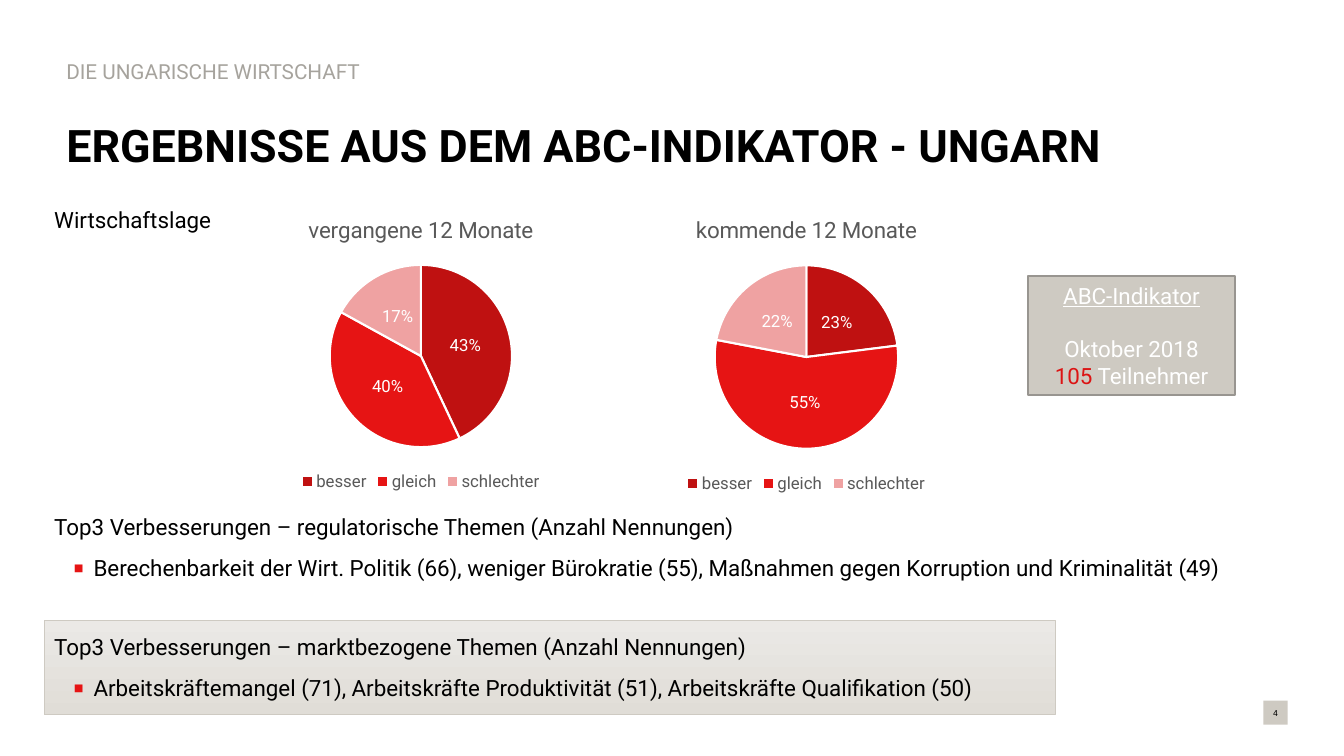
"""Build a slide on the Hungarian results of the ABC indicator survey."""
import pptx
import pptx.chart.data
import pptx.dml.color
import pptx.enum.chart
import pptx.enum.shapes
import pptx.enum.text
import pptx.oxml
import pptx.oxml.ns
import pptx.util

FONT = "Roboto"
BLACK, WHITE, SAND, GREY, RED = "000000", "FFFFFF", "CECAC2", "595959", "E61414"
ANSWERS = {"besser": "BF1111", "gleich": RED, "schlechter": "EFA2A2"}
PIE_TOP, PIE_SHARE = 0.218, 0.617
hue = pptx.dml.color.RGBColor.from_string
Pt = pptx.util.Pt
middle = pptx.enum.text.MSO_ANCHOR.MIDDLE
centred = pptx.enum.text.PP_ALIGN.CENTER
rectangle = pptx.enum.shapes.MSO_SHAPE.RECTANGLE

deck = pptx.Presentation()
deck.slide_width = pptx.util.Inches(13.33)
deck.slide_height = pptx.util.Inches(7.5)
slide = deck.slides.add_slide(deck.slide_layouts[6])


def place(left, top, width, height):
    """Turn percentages of the slide into lengths."""
    across, down = deck.slide_width / 100, deck.slide_height / 100
    return int(left * across), int(top * down), int(width * across), int(height * down)


def write(paragraph, text, size, colour):
    """Append a run and return its font."""
    run = paragraph.add_run()
    run.text = text
    run.font.name, run.font.size = FONT, Pt(size)
    run.font.color.rgb = hue(colour)
    return run.font


page_tile = slide.shapes.add_shape(rectangle, *place(94, 92.67, 1.8, 3.2))
market_panel = slide.shapes.add_shape(rectangle, *place(3.3, 82, 75.23, 12.53))
survey_box = slide.shapes.add_shape(rectangle, *place(76.5, 36.53, 15.38, 15.73))
for block in (page_tile, market_panel, survey_box):
    block.shadow.inherit = False
for block in (page_tile, survey_box):
    block.fill.solid()
    block.fill.fore_color.rgb = hue(SAND)
    block.text_frame.vertical_anchor = middle

page_tile.line.fill.background()
page_number = page_tile.text_frame
page_number.margin_left = page_number.margin_right = 0
page_number.margin_top = page_number.margin_bottom = 0
page_number.paragraphs[0].alignment = centred
write(page_number.paragraphs[0], "4", 6, BLACK)

market_panel.fill.gradient()
market_panel.fill.gradient_angle = 270
for stop, colour in zip(market_panel.fill.gradient_stops, ("EBE9E6", "E0DDD7")):
    stop.color.rgb = hue(colour)
market_panel.line.color.rgb = hue(SAND)
market_panel.line.width = Pt(0.5)

survey_box.line.color.rgb = hue("989590")
survey_box.line.width = Pt(1)
survey = survey_box.text_frame
survey_name, survey_month, survey_size = (
    survey.paragraphs[0], survey.add_paragraph(), survey.add_paragraph())
for line in survey.paragraphs:
    line.alignment = centred
write(survey_name, "ABC-Indikator", 16, WHITE).underline = True
survey_month.space_before = Pt(19)
write(survey_month, "Oktober 2018", 16, WHITE)
write(survey_size, "105", 16, "DC1414")
write(survey_size, " Teilnehmer", 16, WHITE)

for text, area, size, colour, bold in (
    ("DIE UNGARISCHE WIRTSCHAFT", (4.2, 7.47, 45.75, 4.4), 14.8, "A6A39D", False),
    ("ERGEBNISSE AUS DEM ABC-INDIKATOR - UNGARN", (4.2, 11.87, 91.5, 15.47), 32, BLACK, True),
):
    heading = slide.shapes.add_textbox(*place(*area)).text_frame
    heading.word_wrap = True
    heading.vertical_anchor = middle
    heading.paragraphs[0].line_spacing = 0.9
    write(heading.paragraphs[0], text, size, colour).bold = bold

for top, height, topic, answers in (
    (26.67, 5, "Wirtschaftslage", None),
    (67.2, 11, "Top3 Verbesserungen – regulatorische Themen (Anzahl Nennungen)",
     "Berechenbarkeit der Wirt. Politik (66), weniger Bürokratie (55), "
     "Maßnahmen gegen Korruption und Kriminalität (49)"),
    (83.07, 11, "Top3 Verbesserungen – marktbezogene Themen (Anzahl Nennungen)",
     "Arbeitskräftemangel (71), Arbeitskräfte Produktivität (51), "
     "Arbeitskräfte Qualifikation (50)"),
):
    section = slide.shapes.add_textbox(*place(3.3, top, 91.5, height)).text_frame
    section.word_wrap = True
    write(section.paragraphs[0], topic, 16, BLACK)
    if answers:
        section.paragraphs[0].space_after = Pt(6)
        bullet = section.add_paragraph()
        properties = bullet._p.get_or_add_pPr()
        properties.set("marL", str(pptx.util.Inches(0.39)))
        properties.set("indent", str(pptx.util.Inches(-0.2)))
        for mark in (
            f'buClr {{}}><a:srgbClr val="{RED}"/></a:buClr>',
            'buSzPct {} val="120000"/>',
            f'buFont {{}} typeface="{FONT}"/>',
            'buChar {} char="▪"/>',
        ):
            namespace = pptx.oxml.ns.nsdecls("a")
            properties.append(pptx.oxml.parse_xml("<a:" + mark.format(namespace)))
        bullet.space_before = Pt(4)
        write(bullet, answers, 16, BLACK)

for period, shares, area in (
    ("vergangene 12 Monate", (43, 40, 17), (16.5, 26.53, 29.63, 39.07)),
    ("kommende 12 Monate", (23, 55, 22), (45.98, 26.53, 28.05, 39.33)),
):
    outlook = pptx.chart.data.CategoryChartData()
    outlook.categories = list(ANSWERS)
    outlook.add_series(period, shares)
    frame = slide.shapes.add_chart(
        pptx.enum.chart.XL_CHART_TYPE.PIE, *place(*area), outlook)
    chart = frame.chart
    chart.font.name, chart.font.size = FONT, Pt(10)
    chart.has_title = True
    title = chart.chart_title
    title.include_in_layout = False
    write(title.text_frame.paragraphs[0], period, 16, GREY).bold = False
    chart.has_legend = True
    legend = chart.legend
    legend.position = pptx.enum.chart.XL_LEGEND_POSITION.BOTTOM
    legend.include_in_layout = False
    legend.font.name, legend.font.size = FONT, Pt(12)
    legend.font.color.rgb = hue(GREY)

    pie = chart.plots[0]
    pie.vary_by_categories = True
    for index, colour in enumerate(ANSWERS.values()):
        slice_format = pie.series[0].points[index].format
        slice_format.fill.solid()
        slice_format.fill.fore_color.rgb = hue(colour)
        slice_format.line.color.rgb = hue(WHITE)
        slice_format.line.width = Pt(1.5)
    pie.has_data_labels = True
    labels = pie.data_labels
    labels.show_percentage, labels.show_value = True, False
    labels.number_format, labels.number_format_is_linked = "0%", False
    labels.position = pptx.enum.chart.XL_LABEL_POSITION.CENTER
    labels.font.name, labels.font.size = FONT, Pt(12)
    labels.font.color.rgb = hue(WHITE)

    pie_width = PIE_SHARE * frame.height / frame.width
    plot_area = chart._chartSpace.chart.plotArea
    for layout in plot_area.findall(pptx.oxml.ns.qn("c:layout")):
        plot_area.remove(layout)
    plot_area.insert(0, pptx.oxml.parse_xml(
        f'<c:layout {pptx.oxml.ns.nsdecls("c")}><c:manualLayout>'
        '<c:layoutTarget val="inner"/><c:xMode val="edge"/><c:yMode val="edge"/>'
        f'<c:x val="{(1 - pie_width) / 2}"/><c:y val="{PIE_TOP}"/>'
        f'<c:w val="{pie_width}"/><c:h val="{PIE_SHARE}"/>'
        '</c:manualLayout></c:layout>'))

deck.save("out.pptx")
